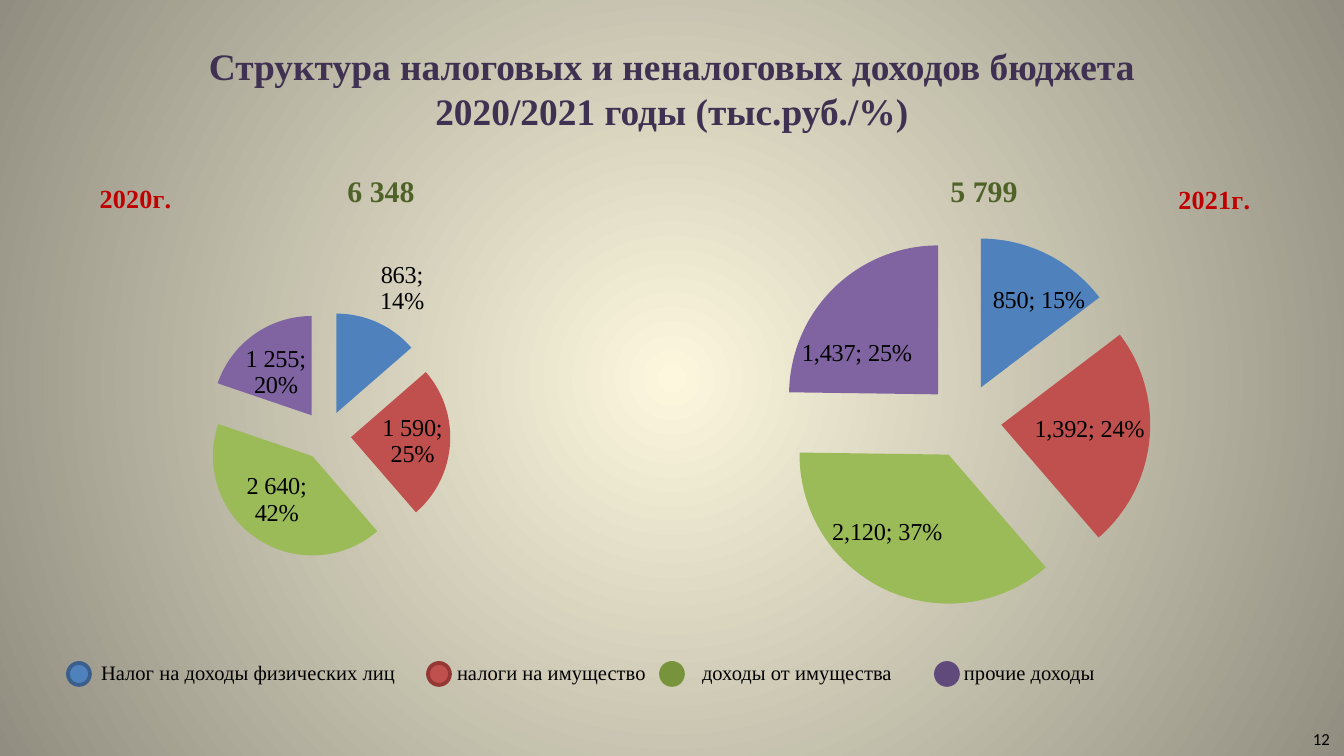
from copy import deepcopy

from lxml.etree import SubElement
from pptx import Presentation
from pptx.chart.data import CategoryChartData
from pptx.dml.color import RGBColor
from pptx.enum.chart import XL_CHART_TYPE, XL_LABEL_POSITION
from pptx.enum.shapes import MSO_SHAPE
from pptx.enum.text import MSO_ANCHOR, PP_ALIGN
from pptx.oxml import parse_xml
from pptx.oxml.ns import nsdecls, qn
from pptx.util import Pt

SCALE = 914400 / 134.4
SERIF = "Times New Roman"
COLORS = {
    "center": "FCF7DD", "edge": "918E81", "title": "403152", "year": "C00000",
    "total": "4F6228", "text": "000000",
}
SLICES = ["4F81BD", "C0504D", "9BBB59", "8064A2"]
LEGEND = [
    ("Налог на доходы физических лиц", 0, 33, "4F81BD", "3A5F8C"),
    ("налоги на имущество", 360, 389, "C0504D", "953735"),
    ("доходы от имущества", 593, 634, "77933C", "77933C"),
    ("прочие доходы", 868, 896, "604A7B", "604A7B"),
]


def px(*values):
    return [round(value * SCALE) for value in values]


def style(font, size, color, bold=False, name=SERIF):
    font.name, font.size, font.bold = name, Pt(size), bold
    font.color.rgb = RGBColor.from_string(color)


def add_text(page, box, text, size, color, bold=False, name=SERIF, align=PP_ALIGN.LEFT):
    frame = page.shapes.add_textbox(*px(*box)).text_frame
    frame.word_wrap = True
    frame.margin_left = frame.margin_right = frame.margin_top = frame.margin_bottom = 0
    frame.vertical_anchor = MSO_ANCHOR.MIDDLE
    frame.text = text
    frame.paragraphs[0].alignment = align
    style(frame.paragraphs[0].runs[0].font, size, color, bold, name)


def add_background(page):
    fill = page.background.fill
    fill.gradient()
    for stop, key in zip(fill.gradient_stops, ("center", "edge")):
        stop.color.rgb = RGBColor.from_string(COLORS[key])
    gradient = page.background._cSld.find(".//" + qn("a:gradFill"))
    gradient.remove(gradient.find(qn("a:lin")))
    circle = SubElement(gradient, qn("a:path"), path="circle")
    SubElement(circle, qn("a:fillToRect"), l="50000", t="50000", r="50000", b="50000")


def add_title(page, box):
    title = page.shapes.title
    title.left, title.top, title.width, title.height = px(*box)
    frame = title.text_frame
    frame.vertical_anchor = MSO_ANCHOR.MIDDLE
    frame.text = "Структура налоговых и неналоговых доходов бюджета\v2020/2021 годы (тыс.руб./%)"
    paragraph = frame.paragraphs[0]
    paragraph.alignment = PP_ALIGN.CENTER
    for span in paragraph.runs:
        style(span.font, 20, COLORS["title"], True)
    for line_break in paragraph._p.findall(qn("a:br")):
        line_break.insert(0, deepcopy(paragraph.runs[0]._r.rPr))


def manual_layout(x, y, width=None, height=None, mode="edge"):
    target = '<c:layoutTarget val="inner"/>' if width else ""
    modes = f'<c:xMode val="{mode}"/><c:yMode val="{mode}"/>'
    sizes = f'<c:w val="{width}"/><c:h val="{height}"/>' if width else ""
    return parse_xml(
        f'<c:layout {nsdecls("c")}><c:manualLayout>{target}{modes if mode == "edge" else ""}'
        f'<c:x val="{x}"/><c:y val="{y}"/>{sizes}</c:manualLayout></c:layout>'
    )


def add_separator(labels, text):
    separator = parse_xml(f'<c:separator {nsdecls("c")}>{text}</c:separator>')
    labels.find(qn("c:showBubbleSize")).addnext(separator)


def add_labels(series, box, separator, shifts):
    labels = series.data_labels
    labels.show_value = labels.show_percentage = True
    labels.position = XL_LABEL_POSITION.CENTER
    style(labels.font, 13, COLORS["text"])
    add_separator(labels._element, separator)
    for lines in labels._element.findall(qn("c:showLeaderLines")):
        lines.set("val", "0")
    for index, (right, down) in enumerate(shifts):
        label = series.points[index].data_label
        style(label.font, 13, COLORS["text"])
        label.position = XL_LABEL_POSITION.CENTER
        element = labels._element.findall(qn("c:dLbl"))[index]
        element.find(qn("c:showPercent")).set("val", "1")
        add_separator(element, separator)
        shift = manual_layout(round(right / box[2], 4), round(down / box[3], 4), mode="factor")
        element.find(qn("c:idx")).addnext(shift)


def add_pie(page, box, year, values, number_format, title_spot, plot_spot, separator, shifts):
    data = CategoryChartData()
    data.categories = ["1", "2", "3", "4"]
    data.add_series(year, values, number_format)
    chart = page.shapes.add_chart(XL_CHART_TYPE.PIE, *px(*box), data).chart
    chart.has_legend = False
    style(chart.font, 18, COLORS["text"], name="Calibri")

    chart.has_title = True
    title = chart.chart_title
    title.text_frame.text = year
    style(title.text_frame.paragraphs[0].runs[0].font, 14, COLORS["year"], True)
    title.include_in_layout = False
    for old in title._element.findall(qn("c:layout")):
        title._element.remove(old)
    title._element.find(qn("c:tx")).addnext(manual_layout(*title_spot))

    area = chart._chartSpace.chart.plotArea
    for old in area.findall(qn("c:layout")):
        area.remove(old)
    area.insert(0, manual_layout(*plot_spot))

    plot = chart.plots[0]
    plot.vary_by_categories = True
    series = plot.series[0]
    series._element.find(qn("c:tx")).addnext(
        parse_xml(f'<c:explosion {nsdecls("c")} val="25"/>'))
    for index, color in enumerate(SLICES):
        fill = series.points[index].format.fill
        fill.solid()
        fill.fore_color.rgb = RGBColor.from_string(color)
    add_labels(series, box, separator, shifts)


def add_legend(page, box):
    left, top, width, height = box
    for text, dot_left, text_left, color, outline in LEGEND:
        dot = page.shapes.add_shape(
            MSO_SHAPE.FLOWCHART_CONNECTOR, *px(left + dot_left, top, height, height))
        dot.shadow.inherit = False
        dot.fill.solid()
        dot.fill.fore_color.rgb = RGBColor.from_string(color)
        dot.line.color.rgb = RGBColor.from_string(outline)
        dot.line.width = Pt(2)
        add_text(page, (left + text_left, top - 2, width, height), text, 11, COLORS["text"])


def main():
    deck = Presentation()
    deck.slide_width, deck.slide_height = px(1344, 756)
    page = deck.slides.add_slide(deck.slide_layouts[5])
    add_background(page)
    add_title(page, (67, 31, 1210, 114))
    add_pie(page, (90, 177, 487, 446), "2020г.", (863, 1590, 2640, 1255),
            r"[>=1000]#\ ##0;0", (0.01, 0), (0.23, 0.3, 0.51, 0.56),
            ";\n", ((45, -79), (12, 1), (-8, 3), (-7, -2)))
    add_pie(page, (714, 145, 582, 476), "2021г.", (850, 1392, 2120, 1437),
            "#,##0", (0.79, 0.07), (0.11, 0.16, 0.64, 0.84),
            "; ", ((25, -20), (14, -3), (-30, 11), (-29, 12)))
    for box, total in (((228, 166, 306, 50), "6 348"), ((873, 166, 222, 50), "5 799")):
        add_text(page, box, total, 16, COLORS["total"], True, align=PP_ALIGN.CENTER)
    add_legend(page, (68, 663, 310, 22))
    add_text(page, (1313, 725, 30, 28), "12", 9, COLORS["text"], name="Calibri")
    deck.save("out.pptx")


if __name__ == "__main__":
    main()
